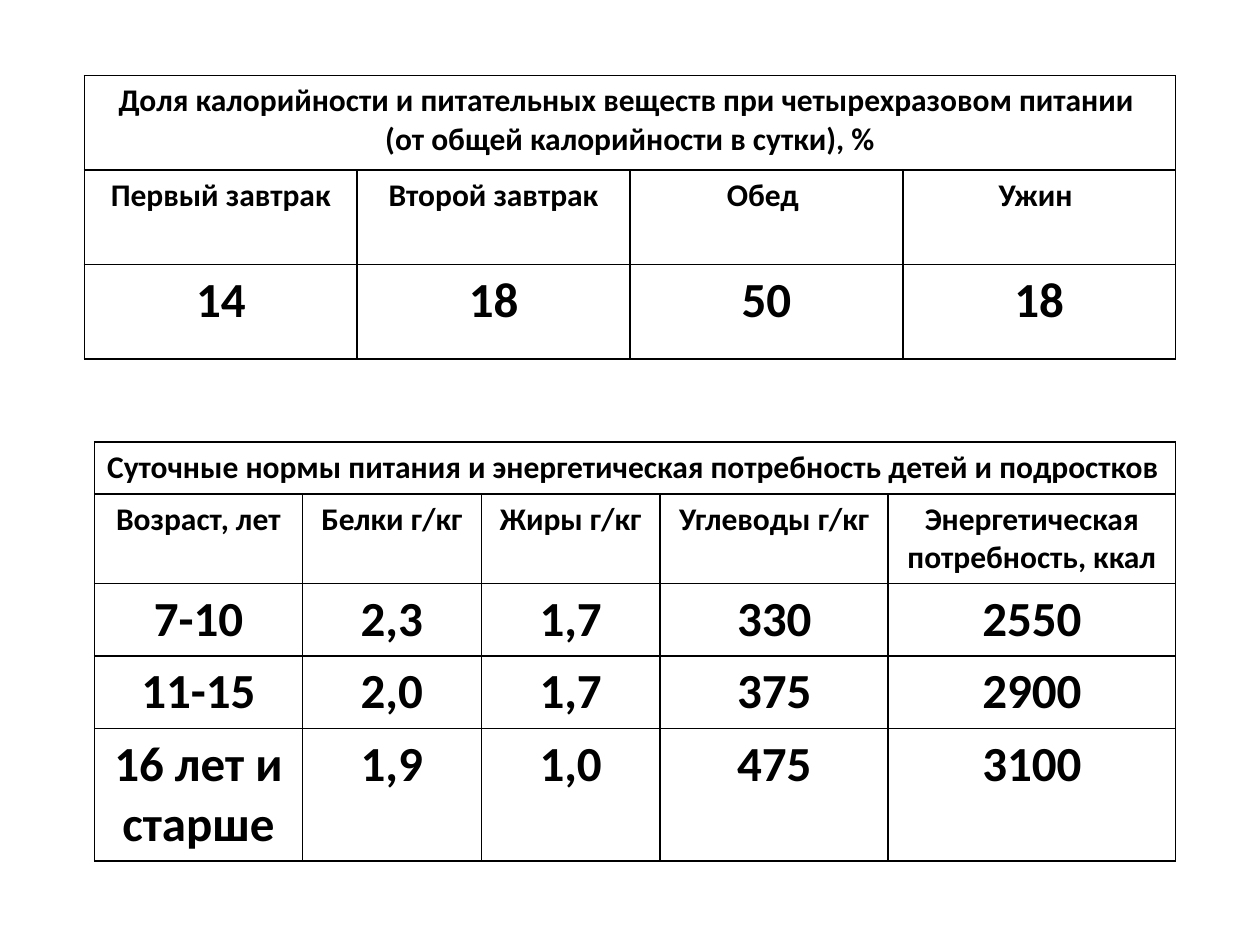
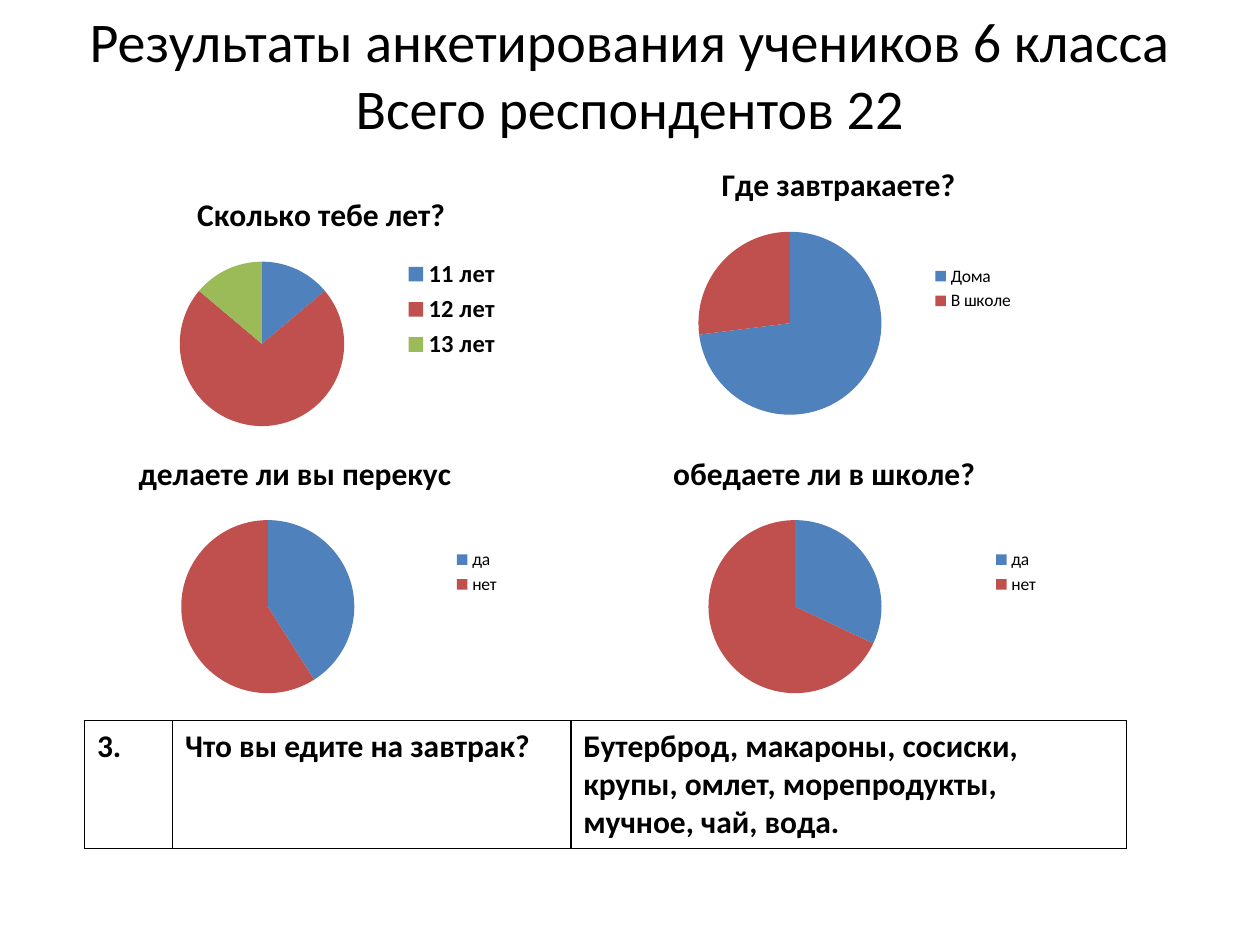
import pptx
import pptx.chart.data
import pptx.dml.color
import pptx.enum.chart
import pptx.enum.text
import pptx.oxml
import pptx.oxml.ns
import pptx.util
from dataclasses import dataclass

Inches = pptx.util.Inches
Pt = pptx.util.Pt
rgb = pptx.dml.color.RGBColor.from_string
LEFT = pptx.enum.text.PP_ALIGN.LEFT
CENTER = pptx.enum.text.PP_ALIGN.CENTER


@dataclass(frozen=True)
class Theme:
    font: str = "Calibri"
    ink: str = "000000"
    slices: tuple = ("4F81BD", "C0504D", "9BBB59")
    title: int = 32
    figure: int = 28
    label: int = 18
    legend: int = 10
    large_legend: int = 14


theme = Theme()


def style_font(font, size, bold=False):
    font.name = theme.font
    font.size = Pt(size)
    font.bold = bold
    font.color.rgb = rgb(theme.ink)


def add_grid(slide, left, top, widths, heights, rows, align=CENTER, heading_align=CENTER):
    """Add a ruled table; a one-item row spans all columns, and rows after the second hold figures."""
    table = slide.shapes.add_table(len(rows), len(widths), Inches(left), Inches(top),
                                   Inches(sum(widths)), Inches(sum(heights))).table
    table.first_row = table.horz_banding = False
    for column, width in zip(table.columns, widths):
        column.width = Inches(width)
    for r, (texts, height) in enumerate(zip(rows, heights)):
        table.rows[r].height = Inches(height)
        if len(texts) == 1:
            table.cell(r, 0).merge(table.cell(r, len(widths) - 1))
        for c, text in enumerate(texts):
            frame = table.cell(r, c).text_frame
            frame.text = text
            for paragraph in frame.paragraphs:
                paragraph.alignment = heading_align if len(texts) == 1 else align
                for run in paragraph.runs:
                    style_font(run.font, theme.figure if r > 1 else theme.label, bold=True)
    for cell in table.iter_cells():
        cell.fill.background()
        properties = cell._tc.get_or_add_tcPr()
        for order, side in enumerate(("lnL", "lnR", "lnT", "lnB")):
            properties.insert(order, pptx.oxml.parse_xml(
                f'<a:{side} {pptx.oxml.ns.nsdecls("a")} w="{Pt(1)}"><a:solidFill>'
                f'<a:srgbClr val="{theme.ink}"/></a:solidFill></a:{side}>'))


deck = pptx.Presentation()
deck.slide_width, deck.slide_height = Inches(10), Inches(7.5)
blank = deck.slide_layouts[6]

# Nutrition norms
norms = deck.slides.add_slide(blank)
add_grid(norms, 0.67, 0.6, [2.165] * 4, [0.75] * 3, [
    ["Доля калорийности и питательных веществ при четырехразовом питании \n"
     "(от общей калорийности в сутки), %"],
    ["Первый завтрак", "Второй завтрак", "Обед ", "Ужин "],
    ["14", "18", "50", "18"],
])
add_grid(norms, 0.75, 3.51, [1.65, 1.42, 1.42, 1.81, 2.28], [0.41, 0.71, 0.57, 0.57, 1.05], [
    ["Суточные нормы питания и энергетическая потребность детей и подростков"],
    ["Возраст, лет", "Белки г/кг", "Жиры г/кг", "Углеводы г/кг", "Энергетическая потребность, ккал"],
    ["7-10", "2,3", "1,7", "330", "2550"],
    ["11-15", "2,0", "1,7", "375", "2900"],
    ["16 лет и старше", "1,9", "1,0", "475", "3100"],
], heading_align=LEFT)

# Survey results
survey = deck.slides.add_slide(blank)
questions = [
    ("Сколько тебе лет?", (0.98, 1.39, 3.14, 2.13), {"11 лет ": 14, "12 лет ": 73, "13 лет ": 14}),
    ("Где завтракаете?", (5.16, 1.15, 2.99, 2.28), {"Дома": 73, "В школе": 27}),
    ("делаете ли вы перекус ", (0.67, 3.44, 3.4, 2.2), {"да ": 41, "нет": 59}),
    ("обедаете ли в школе? ", (4.76, 3.44, 3.62, 2.2), {"да ": 32, "нет ": 68}),
]
for question, place, answers in questions:
    shares = pptx.chart.data.CategoryChartData()
    shares.categories = list(answers)
    shares.add_series(question, list(answers.values()))
    pie = survey.shapes.add_chart(pptx.enum.chart.XL_CHART_TYPE.PIE,
                                  *map(Inches, place), shares).chart
    style_font(pie.font, theme.legend)
    pie.has_title = True
    pie.chart_title.include_in_layout = False
    heading = pie.chart_title.text_frame
    heading.text = question
    style_font(heading.paragraphs[0].runs[0].font, theme.label, bold=True)
    pie.has_legend = True
    pie.legend.position = pptx.enum.chart.XL_LEGEND_POSITION.RIGHT
    pie.legend.include_in_layout = False
    many_answers = len(answers) > 2
    style_font(pie.legend.font, theme.large_legend if many_answers else theme.legend, many_answers)
    pie.plots[0].vary_by_categories = True
    for index, color in enumerate(theme.slices[:len(answers)]):
        fill = pie.plots[0].series[0].points[index].format.fill
        fill.solid()
        fill.fore_color.rgb = rgb(color)

add_grid(survey, 0.67, 5.72, [0.7, 3.16, 4.41], [1], [
    ["3.", "Что вы едите на завтрак?",
     "Бутерброд, макароны, сосиски, крупы, омлет, морепродукты, мучное, чай, вода."],
], align=LEFT)

title = survey.shapes.add_textbox(Inches(0.5), Inches(0), Inches(9), Inches(0.85)).text_frame
title.word_wrap = True
title.text = "Результаты анкетирования учеников 6 класса\vВсего респондентов 22"
title.paragraphs[0].alignment = CENTER
for run in title.paragraphs[0].runs:
    style_font(run.font, theme.title)

deck.save("out.pptx")
